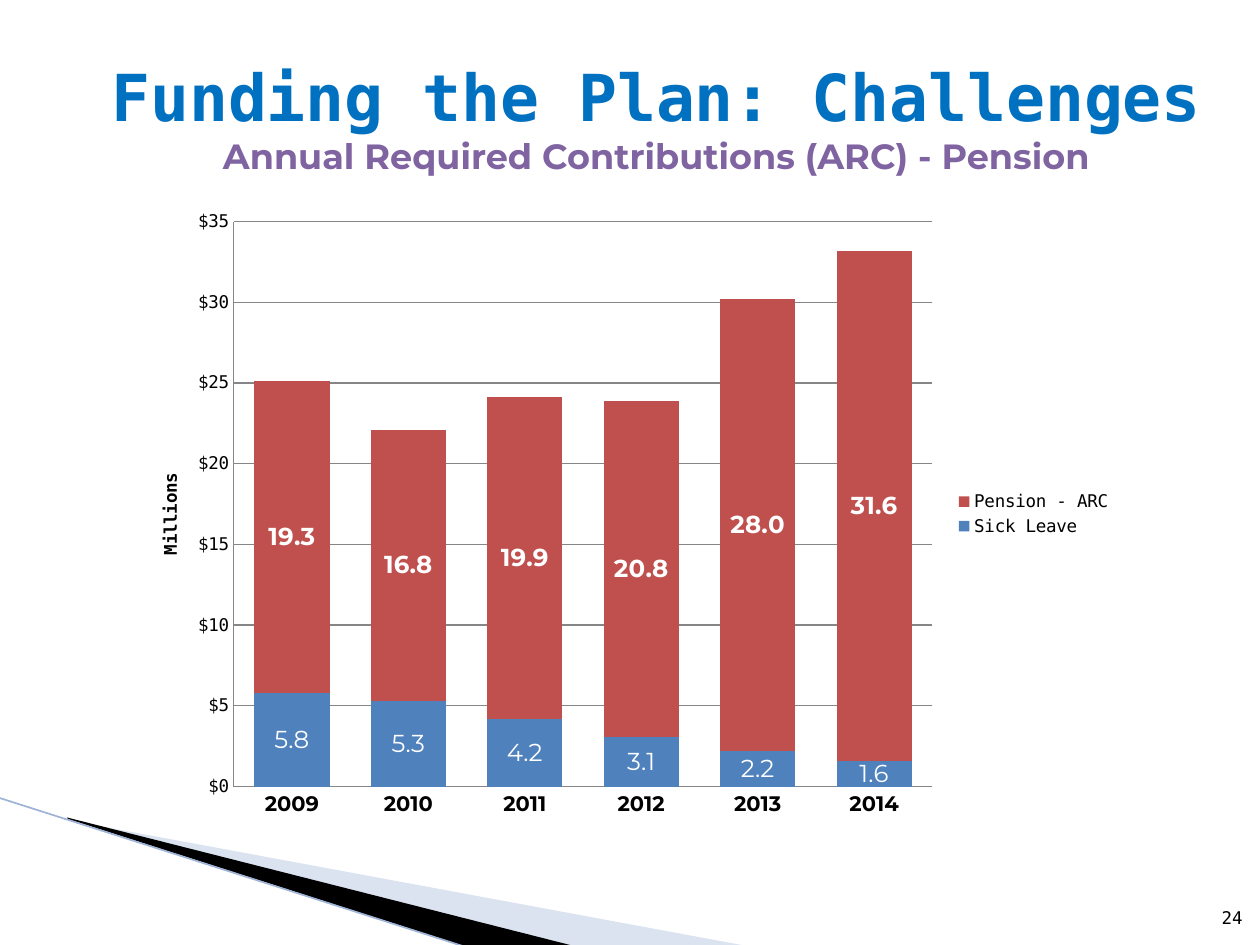
from dataclasses import dataclass

from lxml import etree
from pptx import Presentation
from pptx.chart.data import CategoryChartData
from pptx.dml.color import RGBColor
from pptx.enum.chart import XL_CHART_TYPE, XL_LEGEND_POSITION, XL_TICK_MARK
from pptx.enum.shapes import MSO_CONNECTOR
from pptx.enum.text import MSO_ANCHOR, MSO_AUTO_SIZE, PP_ALIGN
from pptx.oxml.ns import qn
from pptx.util import Cm, Pt

STACKED = XL_CHART_TYPE.COLUMN_STACKED
LEGEND_RIGHT = XL_LEGEND_POSITION.RIGHT
NO_TICK = XL_TICK_MARK.NONE
STRAIGHT = MSO_CONNECTOR.STRAIGHT
MIDDLE, BOTTOM = MSO_ANCHOR.MIDDLE, MSO_ANCHOR.BOTTOM
CENTER, RIGHT = PP_ALIGN.CENTER, PP_ALIGN.RIGHT
NO_FIT = MSO_AUTO_SIZE.NONE


@dataclass(frozen=True)
class Theme:
    mono: str = "DejaVu Sans Mono"
    sans: str = "Montserrat"
    title: str = "0070C0"
    subtitle: str = "8064A2"
    black: str = "000000"
    white: str = "FFFFFF"
    grid: str = "868686"
    sick_leave: str = "4F81BD"
    pension: str = "C0504D"
    wedge: str = "A7B9DB"
    edge: str = "9EB3D6"
    title_size: int = 37
    subtitle_size: int = 20
    label_size: int = 14
    category_size: int = 12
    small_size: int = 10


T = Theme()

YEARS = ["2009", "2010", "2011", "2012", "2013", "2014"]
# name, values, colour, bold labels
SERIES = [
    ("Sick Leave", (5.8, 5.3, 4.2, 3.1, 2.2, 1.6), T.sick_leave, False),
    ("Pension - ARC", (19.3, 16.8, 19.9, 20.8, 28.0, 31.6), T.pension, True),
]


def rgb(color):
    return RGBColor.from_string(color)


def style_font(font, name, size, color, bold=False):
    font.name, font.size, font.bold = name, Pt(size), bold
    font.color.rgb = rgb(color)


def add_run(p, text, *style):
    r = p.add_run()
    r.text = text
    style_font(r.font, *style)


def add_wedge(s, left, top, points, color, opacity=None):
    """Filled outline; points are hundredths of a centimetre from left, top."""
    (x, y), *rest = points
    fb = s.shapes.build_freeform(x, y, scale=Cm(0.01))
    fb.add_line_segments(rest, close=True)
    sp = fb.convert_to_shape(Cm(left), Cm(top))
    sp.shadow.inherit = False
    sp.line.fill.background()
    sp.fill.solid()
    sp.fill.fore_color.rgb = rgb(color)
    if opacity is not None:
        clr = sp.fill._xPr.find(".//" + qn("a:srgbClr"))
        etree.SubElement(clr, qn("a:alpha"), val=str(opacity * 1000))


def add_corner_fan(s, left, top):
    add_wedge(s, left, top,
              [(140, 54), (1511, 308), (1158, 308), (140, 51)], T.wedge, 40)
    add_wedge(s, left, top,
              [(135, 48), (1161, 308), (945, 310), (137, 51)], T.black)
    line = s.shapes.add_connector(STRAIGHT, Cm(left - 0.03), Cm(top + 0.08),
                                  Cm(left + 9.42), Cm(top + 3.1))
    line.line.color.rgb = rgb(T.edge)
    line.line.width = Pt(0.95)
    etree.SubElement(line._element.spPr, qn("a:effectLst"))


def fill_title(s, left, top, width, height):
    sp = s.shapes.title
    sp.left, sp.top, sp.width, sp.height = map(Cm, (left, top, width, height))
    tf = sp.text_frame
    tf.auto_size, tf.word_wrap, tf.vertical_anchor = NO_FIT, True, MIDDLE
    p = tf.paragraphs[0]
    p.alignment = CENTER
    add_run(p, "Funding the Plan: Challenges",
            T.mono, T.title_size, T.title, True)
    p.add_line_break()
    add_run(p, "Annual Required Contributions (ARC) - Pension",
            T.sans, T.subtitle_size, T.subtitle, True)


def add_page_number(s, left, top, width, height):
    sp = s.shapes.add_textbox(*map(Cm, (left, top, width, height)))
    tf = sp.text_frame
    tf.word_wrap, tf.vertical_anchor = True, BOTTOM
    tf.margin_left = tf.margin_right = 0
    p = tf.paragraphs[0]
    p.alignment = RIGHT
    add_run(p, "24", T.mono, T.small_size, T.black)


def set_layout(parent, index, **values):
    """Fix a chart part's place, as fractions of the chart."""
    for old in parent.findall(qn("c:layout")):
        parent.remove(old)
    layout = etree.Element(qn("c:layout"))
    manual = etree.SubElement(layout, qn("c:manualLayout"))
    for key, value in values.items():
        etree.SubElement(manual, qn("c:" + key), val=str(value))
    parent.insert(index, layout)


def style_axes(chart):
    cat, val = chart.category_axis, chart.value_axis
    for axis in (cat, val):
        axis.major_tick_mark = axis.minor_tick_mark = NO_TICK
        axis.format.line.color.rgb = rgb(T.grid)
    style_font(cat.tick_labels.font, T.sans, T.category_size, T.black, True)
    val.minimum_scale, val.maximum_scale, val.major_unit = 0, 35, 5
    val.has_major_gridlines = True
    val.major_gridlines.format.line.color.rgb = rgb(T.grid)
    val.tick_labels.number_format = '"$"#,##0'
    val.tick_labels.number_format_is_linked = False
    p = val.axis_title.text_frame.paragraphs[0]
    add_run(p, "Millions", T.mono, T.small_size, T.black, True)
    set_layout(val.axis_title._element, 1,
               xMode="edge", yMode="edge", x=0.03, y=0.43)


def add_contribution_chart(s, left, top, width, height):
    data = CategoryChartData(number_format="0.0")
    data.categories = YEARS
    for name, values, _, _ in SERIES:
        data.add_series(name, values)
    chart = s.shapes.add_chart(
        STACKED, *map(Cm, (left, top, width, height)), data).chart
    chart.has_title = False
    style_font(chart.font, T.mono, T.small_size, T.black)
    chart.has_legend = True
    chart.legend.position = LEGEND_RIGHT
    chart.legend.include_in_layout = False

    plot = chart.plots[0]
    plot.gap_width, plot.overlap, plot.vary_by_categories = 55, 100, False
    for series, (_, _, color, bold) in zip(plot.series, SERIES):
        series.format.fill.solid()
        series.format.fill.fore_color.rgb = rgb(color)
        labels = series.data_labels
        labels.show_value = True
        style_font(labels.font, T.sans, T.label_size, T.white, bold)
    style_axes(chart)
    set_layout(chart._chartSpace.chart.plotArea, 0, layoutTarget="inner",
               xMode="edge", yMode="edge", x=0.108, y=0.036, w=0.7, h=0.897)


def main():
    prs = Presentation()
    prs.slide_width, prs.slide_height = Cm(25.4), Cm(19.05)
    s = prs.slides.add_slide(prs.slide_layouts[5])
    add_corner_fan(s, 0, 16)
    fill_title(s, 1.27, 0.76, 23.93, 3.18)
    add_page_number(s, 24.03, 17.81, 1.02, 1.02)
    add_contribution_chart(s, 2.54, 4.01, 20.12, 12.7)
    prs.save("out.pptx")


if __name__ == "__main__":
    main()
